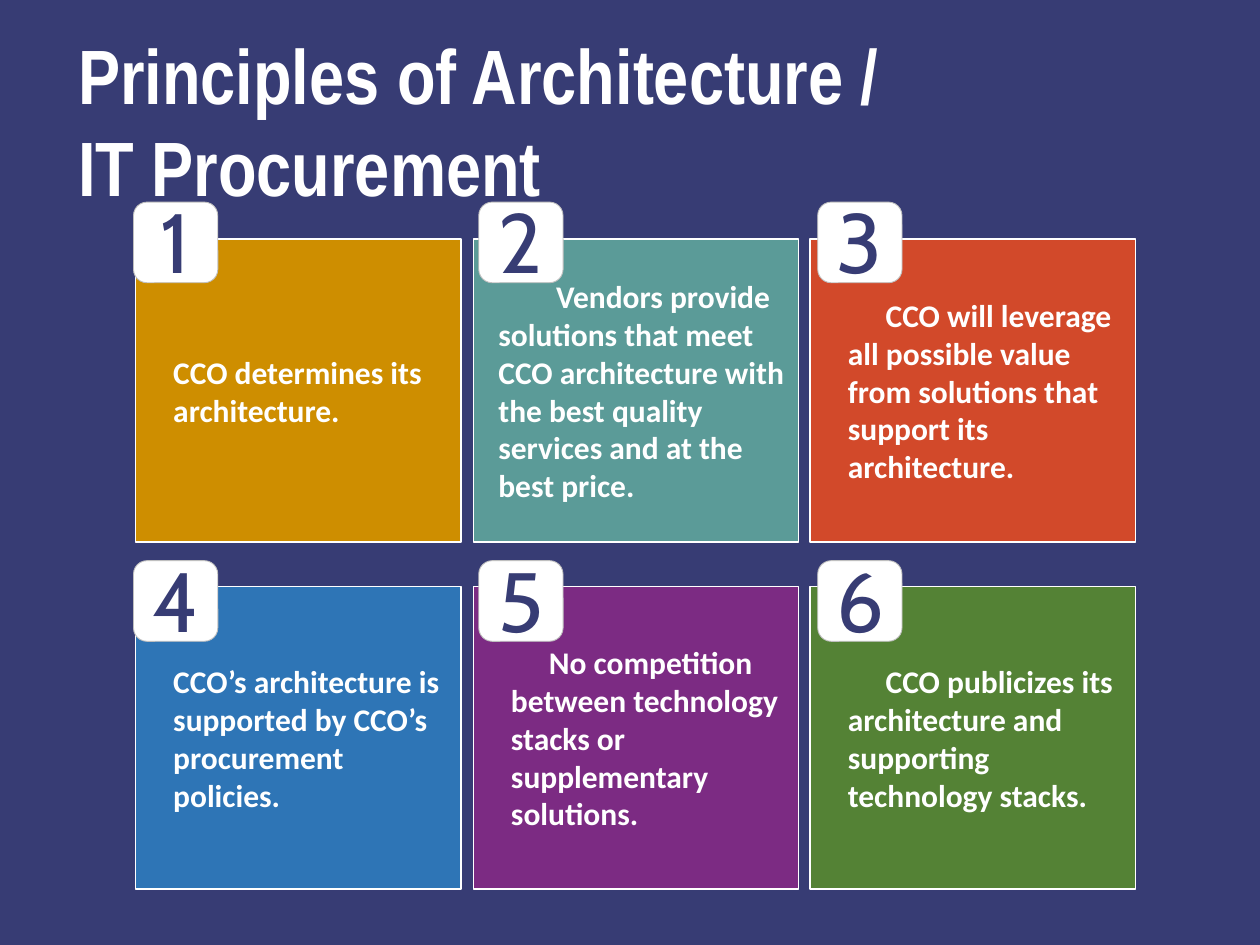
from collections import namedtuple
from dataclasses import dataclass
from itertools import product

from pptx import Presentation
from pptx.dml.color import RGBColor as Rgb
from pptx.enum.shapes import MSO_SHAPE as Preset
from pptx.enum.text import MSO_ANCHOR as Anchor, MSO_AUTO_SIZE as AutoSize, PP_ALIGN as Align
from pptx.util import Pt

Box = namedtuple("Box", "left top width height")
Principle = namedtuple("Principle", "wording color margin indent")


@dataclass(frozen=True)
class Theme:
    navy: str = "373C74"
    white: str = "FFFFFF"
    badge_edge: str = "BFBFBF"
    title_font: str = "Arial Narrow"
    body_font: str = "Calibri"
    number_font: str = "Cabin"
    title_size: int = 44
    body_size: int = 18
    number_size: int = 48


THEME = Theme()

PRINCIPLES = [
    Principle("CCO determines its architecture.", "CE8E00", 14.4, 0),
    Principle("Vendors provide solutions that meet CCO architecture with the best "
              "quality services and at the best price.", "5B9B98", 7.2, 33),
    Principle("CCO will leverage all possible value from solutions that support "
              "its architecture.", "D2492A", 14.4, 21.6),
    Principle("CCO’s architecture is supported by CCO’s procurement policies.",
              "2E75B6", 14.4, 0),
    Principle("No competition between technology stacks or supplementary solutions.",
              "7C2B83", 14.4, 21.6),
    Principle("CCO publicizes its architecture and supporting technology stacks.",
              "548235", 14.4, 21.6),
]

CARD_WIDTH, CARD_HEIGHT = 185.8, 172.8
BADGE_WIDTH, BADGE_HEIGHT = 48.2, 46.1
COLUMNS = [(77.5, 76.3), (270.5, 273.6), (463, 467.3)]
ROWS = [(136.8, 115.5), (335.2, 320.4)]


def place(part, box):
    part.left, part.top, part.width, part.height = map(Pt, box)


def write(paragraph, wording, font, size, color, bold=False):
    run = paragraph.add_run()
    run.text = wording
    run.font.name = font
    run.font.size = Pt(size)
    run.font.bold = bold
    run.font.color.rgb = Rgb.from_string(color)


def add_panel(slide, preset, box, fill, edge, edge_width):
    panel = slide.shapes.add_shape(preset, *map(Pt, box))
    panel.shadow.inherit = False
    panel.fill.solid()
    panel.fill.fore_color.rgb = Rgb.from_string(fill)
    panel.line.color.rgb = Rgb.from_string(edge)
    panel.line.width = Pt(edge_width)
    return panel


def add_title(slide, box, lines):
    title = slide.shapes.title
    place(title, box)
    frame = title.text_frame
    frame.word_wrap = True
    frame.auto_size = AutoSize.SHAPE_TO_FIT_TEXT
    frame.vertical_anchor = Anchor.TOP
    for index, line in enumerate(lines):
        paragraph = frame.add_paragraph() if index else frame.paragraphs[0]
        paragraph.alignment = Align.LEFT
        write(paragraph, line, THEME.title_font, THEME.title_size, THEME.white, bold=True)


def add_card(slide, box, principle):
    card = add_panel(slide, Preset.RECTANGLE, box, principle.color, THEME.white, 1)
    frame = card.text_frame
    frame.word_wrap = True
    frame.vertical_anchor = Anchor.MIDDLE
    paragraph = frame.paragraphs[0]
    paragraph.alignment = Align.LEFT
    paragraph.space_before = Pt(24)
    properties = paragraph._p.get_or_add_pPr()
    properties.set("marL", str(Pt(principle.margin)))
    properties.set("indent", str(Pt(principle.indent)))
    write(paragraph, principle.wording, THEME.body_font, THEME.body_size,
          THEME.white, bold=True)


def add_badge(slide, box, number):
    add_panel(slide, Preset.ROUNDED_RECTANGLE, box, THEME.white, THEME.badge_edge, 0.5)
    digit_box = Box(box.left, box.top - 10.6, box.width, 65.4)
    digit = slide.shapes.add_textbox(*map(Pt, digit_box))
    frame = digit.text_frame
    frame.word_wrap = True
    frame.auto_size = AutoSize.SHAPE_TO_FIT_TEXT
    paragraph = frame.paragraphs[0]
    paragraph.alignment = Align.CENTER
    write(paragraph, str(number), THEME.number_font, THEME.number_size, THEME.navy)


def build_principles_slide(deck):
    slide = deck.slides.add_slide(deck.slide_layouts[5])
    slide.background.fill.solid()
    slide.background.fill.fore_color.rgb = Rgb.from_string(THEME.navy)
    add_title(slide, Box(37.4, 12.2, 638.6, 113.8),
              ["Principles of Architecture /", "IT Procurement"])
    cells = list(product(ROWS, COLUMNS))
    for ((top, _), (left, _)), principle in zip(cells, PRINCIPLES):
        add_card(slide, Box(left, top, CARD_WIDTH, CARD_HEIGHT), principle)
    for number, ((_, top), (_, left)) in enumerate(cells, start=1):
        add_badge(slide, Box(left, top, BADGE_WIDTH, BADGE_HEIGHT), number)


def main():
    deck = Presentation()
    deck.slide_width, deck.slide_height = Pt(720), Pt(540)
    build_principles_slide(deck)
    deck.save("out.pptx")


if __name__ == "__main__":
    main()
